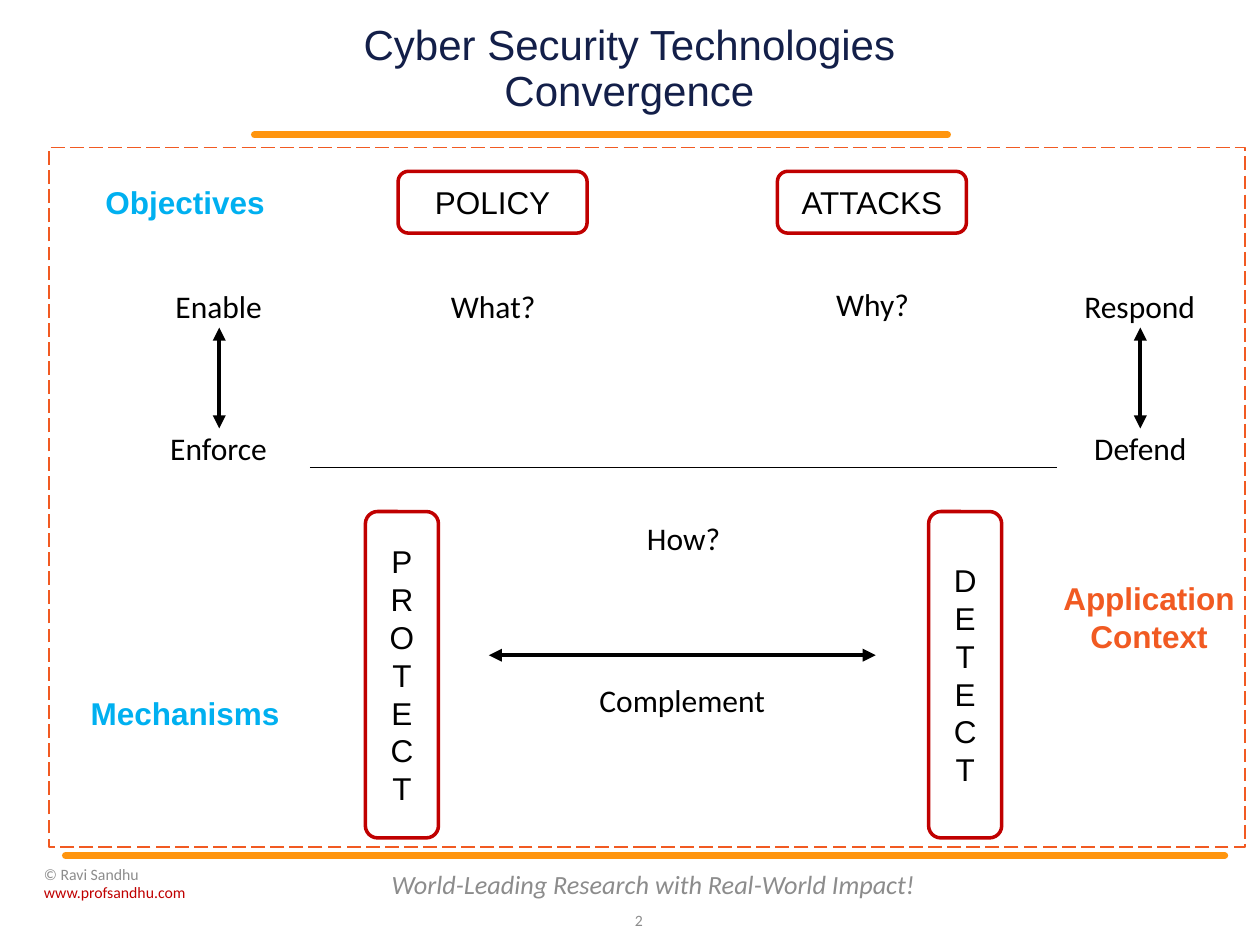
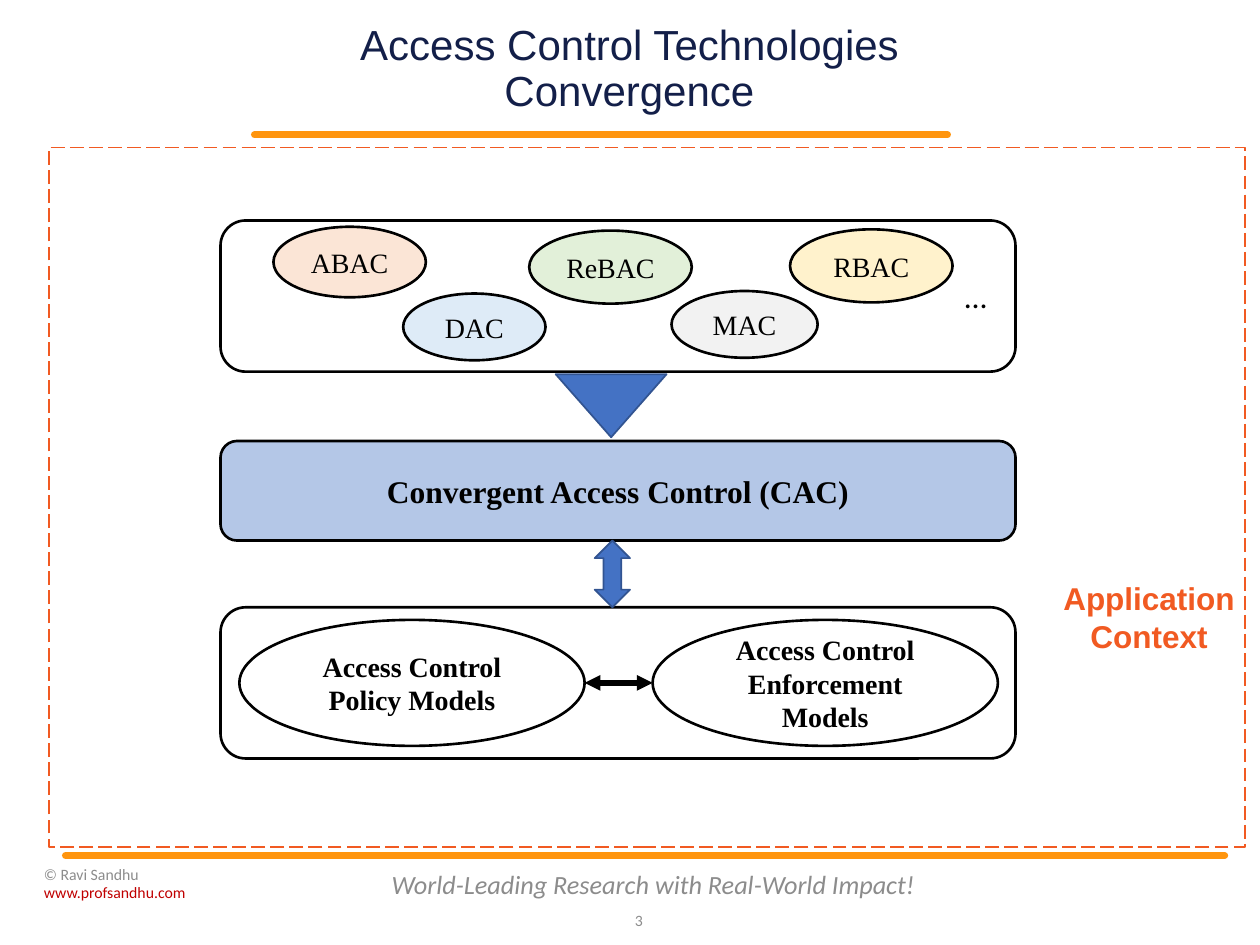
from lxml import etree
from pptx import Presentation
from pptx.dml.color import RGBColor
from pptx.enum.dml import MSO_LINE
from pptx.enum.shapes import MSO_CONNECTOR, MSO_SHAPE
from pptx.enum.text import MSO_ANCHOR, PP_ALIGN
from pptx.oxml.ns import qn
from pptx.util import Inches, Pt

ROUNDED = MSO_SHAPE.ROUNDED_RECTANGLE
OVAL = MSO_SHAPE.OVAL
RECTANGLE = MSO_SHAPE.RECTANGLE
UP_ARROW = MSO_SHAPE.UP_ARROW
UP_DOWN_ARROW = MSO_SHAPE.UP_DOWN_ARROW
STRAIGHT = MSO_CONNECTOR.STRAIGHT
LONG_DASH = MSO_LINE.LONG_DASH
MIDDLE = MSO_ANCHOR.MIDDLE
TOP = MSO_ANCHOR.TOP
LEFT = PP_ALIGN.LEFT
CENTER = PP_ALIGN.CENTER
RIGHT = PP_ALIGN.RIGHT

SANS, BODY, SERIF = "Arial", "Calibri", "Times New Roman"
BLACK, WHITE, GRAY = "000000", "FFFFFF", "8C8C8C"
NAVY, RED, SKY = "131F49", "C00000", "00B0F0"
AMBER, ORANGE = "FF950E", "F15A22"
ARROW_BLUE, ARROW_EDGE, PALE_BLUE = "4472C4", "325491", "B4C7E7"

TITLE_ONLY = 5
STAGE_LEFT, STAGE_WIDTH = 1.75, 6.31


def rgb(color):
    return RGBColor.from_string(color)


def inches(box):
    return [Inches(value) for value in box]


def format_text(frame, size, font, color, bold=False, italic=False, align=CENTER):
    for paragraph in frame.paragraphs:
        paragraph.alignment = align
        for run in paragraph.runs:
            run.font.size = Pt(size)
            run.font.name = font
            run.font.bold = bold
            run.font.italic = italic
            run.font.color.rgb = rgb(color)


def add_text(slide, text, box, size=18, color=BLACK, align=CENTER,
             italic=False, anchor=TOP, wrap=False):
    frame = slide.shapes.add_textbox(*inches(box)).text_frame
    frame.text = text
    frame.word_wrap = wrap
    frame.vertical_anchor = anchor
    format_text(frame, size, BODY, color, italic=italic, align=align)
    return frame


def add_figure(slide, kind, box, fill=None, edge=None, width=1.5):
    figure = slide.shapes.add_shape(kind, *inches(box))
    figure.shadow.inherit = False
    if fill:
        figure.fill.solid()
        figure.fill.fore_color.rgb = rgb(fill)
    else:
        figure.fill.background()
    if edge:
        figure.line.color.rgb = rgb(edge)
        figure.line.width = Pt(width)
    else:
        figure.line.fill.background()
    return figure


def write_in(figure, text, size, font, color=BLACK, bold=False, wrap=True):
    frame = figure.text_frame
    frame.text = text
    frame.word_wrap = wrap
    frame.vertical_anchor = MIDDLE
    format_text(frame, size, font, color, bold)


def add_heading(slide, text, left, top, color):
    heading = add_figure(slide, ROUNDED, (left, top, 1.5, 0.49), WHITE)
    write_in(heading, text, 18, SANS, color, bold=True, wrap=False)


def add_red_box(slide, text, box, stacked=False):
    red_box = add_figure(slide, ROUNDED, box, WHITE, RED, 2)
    write_in(red_box, text, 18, SANS, wrap=False)
    if stacked:
        red_box.element.txBody.bodyPr.set("vert", "wordArtVert")


def add_oval(slide, text, box, fill=None, bold=False):
    oval = add_figure(slide, OVAL, box, fill, BLACK)
    write_in(oval, text, 16, SERIF, bold=bold)


def add_line(slide, start, end, color=BLACK, width=2.5, arrows=False, round_cap=False):
    line = slide.shapes.add_connector(STRAIGHT, *inches(start + end))
    line.line.color.rgb = rgb(color)
    line.line.width = Pt(width)
    properties = line.element.spPr
    outline = properties.find(qn("a:ln"))
    if round_cap:
        outline.set("cap", "rnd")
    if arrows:
        for end_tag in ("a:headEnd", "a:tailEnd"):
            etree.SubElement(outline, qn(end_tag), type="triangle")
    etree.SubElement(properties, qn("a:effectLst"))


def add_slide_number(slide, number):
    frame = add_text(slide, str(number), (4.8, 7.1, 0.4, 0.4), 9, GRAY, RIGHT,
                     anchor=MIDDLE, wrap=True)
    run = frame.paragraphs[0].runs[0]._r
    field = etree.Element(qn("a:fld"), type="slidenum",
                          id="{B6F15528-21DE-4FAA-801E-634DDDAF4B2B}")
    run.addprevious(field)
    field.extend(list(run))
    run.getparent().remove(run)


def start_slide(deck, title_text, number):
    slide = deck.slides.add_slide(deck.slide_layouts[TITLE_ONLY])
    add_line(slide, (2.02, 1.07), (7.52, 1.07), AMBER, 4, round_cap=True)
    add_line(slide, (0.52, 6.79), (9.72, 6.79), AMBER, 4, round_cap=True)

    title = slide.shapes.title
    title.left, title.top, title.width, title.height = inches((2.37, 0.3, 5.25, 0.51))
    frame = title.text_frame
    frame.text = title_text
    frame.word_wrap = True
    frame.vertical_anchor = MIDDLE
    frame.margin_left = frame.margin_right = frame.margin_top = frame.margin_bottom = 0
    frame.paragraphs[0].line_spacing = 0.9
    format_text(frame, 24, SANS, NAVY)

    add_text(slide, "World-Leading Research with Real-World Impact!",
             (3, 6.82, 4.37, 0.4), 15, GRAY, italic=True, anchor=MIDDLE, wrap=True)
    credit = add_text(slide, "© Ravi Sandhu\nwww.profsandhu.com",
                      (0.25, 6.83, 2.75, 0.36), 9, GRAY, LEFT, anchor=MIDDLE, wrap=True)
    credit.paragraphs[1].runs[0].font.color.rgb = rgb(RED)
    add_slide_number(slide, number)
    return slide


def add_application_context(slide):
    context = add_figure(slide, RECTANGLE, (0.39, 1.17, 9.49, 5.55), edge=ORANGE, width=1)
    context.line.dash_style = LONG_DASH
    add_heading(slide, "Application\nContext", 8.37, 4.65, ORANGE)


def build_security(deck):
    slide = start_slide(deck, "Cyber Security Technologies Convergence", 2)

    for text, left in (("PROTECT", 2.9), ("DETECT", 7.37)):
        add_red_box(slide, text, (left, 4.06, 0.58, 2.59), stacked=True)
    for text, left in (("POLICY", 3.16), ("ATTACKS", 6.17)):
        add_red_box(slide, text, (left, 1.36, 1.5, 0.49))

    for text, left, top, width in (
        ("What?", 3.45, 2.23, 0.93),
        ("Why?", 6.5, 2.21, 0.85),
        ("How?", 5, 4.07, 0.85),
        ("Complement", 4.6, 5.36, 1.63),
        ("Enable", 1.24, 2.23, 0.99),
        ("Enforce", 1.2, 3.36, 1.07),
        ("Respond", 8.44, 2.23, 1.21),
        ("Defend", 8.54, 3.36, 1.02),
    ):
        add_text(slide, text, (left, top, width, 0.4))

    add_line(slide, (3.88, 5.2), (6.95, 5.2), arrows=True)
    for x in (1.74, 9.05):
        add_line(slide, (x, 3.4), (x, 2.6), arrows=True)
    add_line(slide, (2.46, 3.71), (8.39, 3.71), width=0.75)

    add_heading(slide, "Objectives", 0.72, 1.36, SKY)
    add_heading(slide, "Mechanisms", 0.72, 5.41, SKY)
    add_application_context(slide)


def build_access_control(deck):
    slide = start_slide(deck, "Access Control Technologies Convergence", 3)

    for top in (1.75, 4.82):
        add_figure(slide, ROUNDED, (STAGE_LEFT, top, STAGE_WIDTH, 1.2), edge=BLACK)
    for text, box, fill in (
        ("ABAC", (2.17, 1.8, 1.21, 0.56), "FBE5D6"),
        ("ReBAC", (4.2, 1.83, 1.29, 0.58), "E2F0D9"),
        ("RBAC", (6.27, 1.82, 1.29, 0.58), "FFF2CC"),
        ("DAC", (3.2, 2.33, 1.13, 0.53), "DEEBF7"),
        ("MAC", (5.33, 2.31, 1.16, 0.53), "F2F2F2"),
    ):
        add_oval(slide, text, box, fill)
    add_text(slide, "…", (7.56, 2.15, 0.44, 0.4), align=LEFT, wrap=True)

    convergent = add_figure(slide, ROUNDED, (STAGE_LEFT, 3.5, STAGE_WIDTH, 0.79),
                            PALE_BLUE, BLACK)
    write_in(convergent, "Convergent Access Control (CAC)", 18, SERIF, bold=True)

    funnel = add_figure(slide, UP_ARROW, (4.41, 2.97, 0.88, 0.5), ARROW_BLUE, ARROW_EDGE, 1)
    funnel.rotation = 180
    funnel.adjustments[0] = 0.5
    funnel.adjustments[1] = 1.55
    add_figure(slide, UP_DOWN_ARROW, (4.72, 4.29, 0.28, 0.53), ARROW_BLUE, ARROW_EDGE, 1)

    for subject, left in (("Policy", 1.9), ("Enforcement", 5.18)):
        add_oval(slide, f"Access Control {subject} Models", (left, 4.92, 2.74, 1), bold=True)
    add_line(slide, (4.64, 5.42), (5.18, 5.42), width=3, arrows=True)
    add_application_context(slide)


def main():
    deck = Presentation()
    deck.slide_width, deck.slide_height = Inches(10), Inches(7.5)
    deck.element.set("firstSlideNum", "2")
    build_security(deck)
    build_access_control(deck)
    deck.save("out.pptx")


if __name__ == "__main__":
    main()
